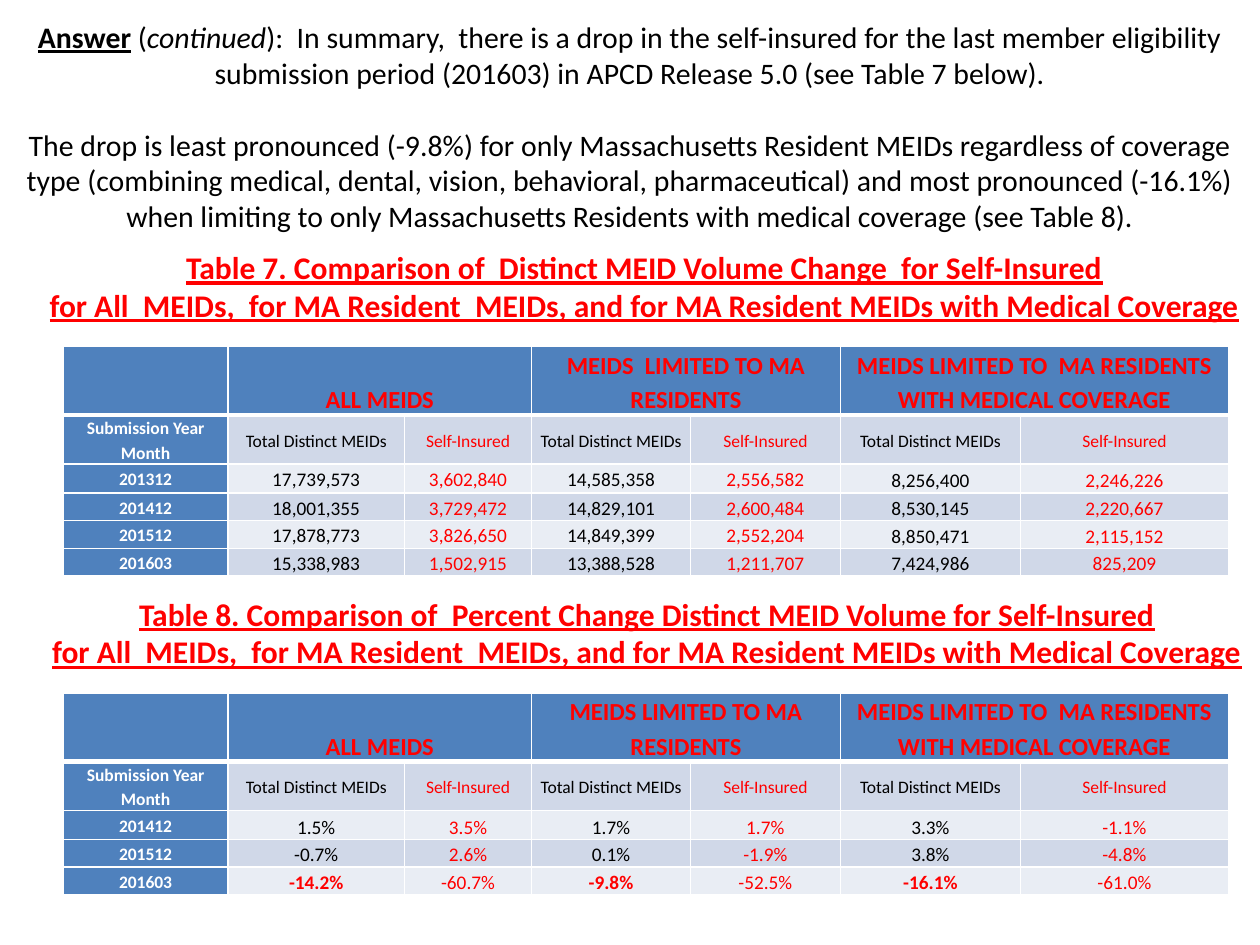
from dataclasses import dataclass

from pptx import Presentation
from pptx.dml.color import RGBColor as Color
from pptx.enum.text import MSO_ANCHOR as Anchor, MSO_AUTO_SIZE as AutoSize, PP_ALIGN as Align
from pptx.oxml.ns import qn
from pptx.util import Inches, Pt
from lxml.etree import SubElement


@dataclass(frozen=True)
class Theme:
    font: str = "Calibri"
    black: str = "000000"
    red: str = "FF0000"
    white: str = "FFFFFF"
    header: str = "4F81BD"
    bands: tuple = ("D0D8E8", "E9EDF4")
    title_size: int = 17
    caption_size: int = 18
    group_size: int = 14
    label_size: int = 10
    value_size: int = 11


def apply(target, formats):
    for name, value in formats.items():
        setattr(target, name, value)


class SlideBuilder:
    def __init__(self, slide, theme):
        self.slide = slide
        self.theme = theme

    def add_run(self, paragraph, text, size, color, **formats):
        run = paragraph.add_run()
        run.text = text
        apply(run.font, {"name": self.theme.font, "size": Pt(size), "bold": False, **formats})
        run.font.color.rgb = Color.from_string(color)

    def place(self, shape, left, top, width, height):
        apply(shape, {"left": Inches(left), "top": Inches(top),
                      "width": Inches(width), "height": Inches(height)})

    def title(self, box, paragraphs):
        shape = self.slide.shapes.title
        self.place(shape, *box)
        frame = shape.text_frame
        apply(frame, {"word_wrap": True, "auto_size": AutoSize.NONE,
                      "vertical_anchor": Anchor.MIDDLE})
        for index, runs in enumerate(paragraphs):
            paragraph = frame.add_paragraph() if index else frame.paragraphs[0]
            gap = Pt(20.7) if index else Pt(0)
            apply(paragraph, {"alignment": Align.CENTER, "space_before": gap})
            for text, formats in runs:
                self.add_run(paragraph, text, self.theme.title_size, self.theme.black, **formats)

    def caption(self, box, lines):
        frame = self.slide.shapes.add_textbox(*map(Inches, box)).text_frame
        apply(frame, {"word_wrap": False, "auto_size": AutoSize.SHAPE_TO_FIT_TEXT})
        for index, line in enumerate(lines):
            paragraph = frame.add_paragraph() if index else frame.paragraphs[0]
            paragraph.alignment = Align.CENTER
            self.add_run(paragraph, line, self.theme.caption_size, self.theme.red,
                         bold=True, underline=True)

    def border(self, cell, row):
        properties = cell._tc.get_or_add_tcPr()
        widths = {"L": 1, "R": 1, "T": 3 if row == 1 else 1, "B": 3 if row == 0 else 1}
        for side, width in widths.items():
            line = SubElement(properties, qn(f"a:ln{side}"), w=str(Pt(width)))
            fill = SubElement(line, qn("a:solidFill"))
            SubElement(fill, qn("a:srgbClr"), val=self.theme.white)

    def cell_style(self, row, column, text, highlights):
        theme = self.theme
        if row == 0:
            return theme.header, theme.group_size, theme.red, True
        if column == 0:
            return theme.header, theme.label_size, theme.white, True
        size = theme.label_size if row == 1 else theme.value_size
        bold = text in highlights
        color = theme.red if bold or column % 2 == 0 else theme.black
        return theme.bands[(row - 1) % 2], size, color, bold

    def table(self, box, columns, heights, rows, bottom_from, highlights=()):
        frame = self.slide.shapes.add_table(len(rows), len(columns), *map(Inches, box))
        table = frame.table
        for column, width in zip(table.columns, columns):
            column.width = Inches(width)
        for row, height in zip(table.rows, heights):
            row.height = Inches(height)
        for row, texts in enumerate(rows):
            for column, text in enumerate(texts):
                cell = table.cell(row, column)
                fill, size, color, bold = self.cell_style(row, column, text, highlights)
                self.border(cell, row)
                cell.fill.solid()
                cell.fill.fore_color.rgb = Color.from_string(fill)
                at_bottom = row == 0 or row > 1 and column >= bottom_from
                apply(cell, {"margin_left": Inches(0.07), "margin_right": Inches(0.07),
                             "margin_top": 0, "margin_bottom": 0,
                             "vertical_anchor": Anchor.BOTTOM if at_bottom else Anchor.MIDDLE})
                paragraph = cell.text_frame.paragraphs[0]
                apply(paragraph, {"alignment": Align.CENTER, "line_spacing": 1.15})
                if text:
                    self.add_run(paragraph, text, size, color, bold=bold)
        for column in range(1, len(columns), 2):
            table.cell(0, column).merge(table.cell(0, column + 1))


COLUMNS = [1.31, 1.4, 1.01, 1.26, 1.19, 1.43, 1.65]
SUBHEADER = ["Submission Year Month"] + ["Total Distinct MEIDs", "Self-Insured"] * 3
SCOPE = "for All  MEIDs,  for MA Resident  MEIDs, and for MA Resident MEIDs with Medical Coverage"

VOLUMES = [
    ["201312", "17,739,573", "3,602,840", "14,585,358", "2,556,582", "8,256,400", "2,246,226"],
    ["201412", "18,001,355", "3,729,472", "14,829,101", "2,600,484", "8,530,145", "2,220,667"],
    ["201512", "17,878,773", "3,826,650", "14,849,399", "2,552,204", "8,850,471", "2,115,152"],
    ["201603", "15,338,983", "1,502,915", "13,388,528", "1,211,707", "7,424,986", "825,209"],
]
CHANGES = [
    ["201412", "1.5%", "3.5%", "1.7%", "1.7%", "3.3%", "-1.1%"],
    ["201512", "-0.7%", "2.6%", "0.1%", "-1.9%", "3.8%", "-4.8%"],
    ["201603", "-14.2%", "-60.7%", "-9.8%", "-52.5%", "-16.1%", "-61.0%"],
]
SUMMARY = [
    [
        ("Answer", {"bold": True, "underline": True}),
        (" (", {}),
        ("continued", {"italic": True}),
        ("):  In summary,  there is a drop in the self-insured for the last member eligibility "
         "submission period (201603) in APCD Release 5.0 (see Table 7 below).", {}),
    ],
    [
        ("The drop is least pronounced (-9.8%) for only Massachusetts Resident MEIDs regardless "
         "of coverage type (combining medical, dental, vision, behavioral, pharmaceutical) and "
         "most pronounced (-16.1%) when limiting to only Massachusetts Residents with medical "
         "coverage (see Table 8).", {}),
    ],
]


def group_header(residents):
    return ["", "ALL MEIDS", "", residents, "",
            "MEIDS LIMITED TO  MA RESIDENTS WITH MEDICAL COVERAGE", ""]


def main():
    presentation = Presentation()
    apply(presentation, {"slide_width": Inches(10), "slide_height": Inches(7.5)})
    slide = presentation.slides.add_slide(presentation.slide_layouts[5])
    builder = SlideBuilder(slide, Theme())

    builder.table((0.5, 2.75, 9.25, 1.81), COLUMNS, [0.44, 0.36, 0.23, 0.22, 0.22, 0.22],
                  [group_header("MEIDS  LIMITED TO MA RESIDENTS"), SUBHEADER, *VOLUMES],
                  bottom_from=5)
    builder.table((0.5, 5.5, 9.25, 1.59), COLUMNS, [0.42, 0.36, 0.23, 0.22, 0.22],
                  [group_header("MEIDS LIMITED TO MA RESIDENTS"), SUBHEADER, *CHANGES],
                  bottom_from=1, highlights=("-14.2%", "-9.8%", "-16.1%"))
    builder.caption((0.25, 1.92, 9.73, 0.71), [
        "Table 7. Comparison of  Distinct MEID Volume Change  for Self-Insured", SCOPE])
    builder.title((0, 0.42, 10, 1.16), SUMMARY)
    builder.caption((0.27, 4.67, 9.73, 0.71), [
        "Table 8. Comparison of  Percent Change Distinct MEID Volume for Self-Insured", SCOPE])

    presentation.save("out.pptx")


if __name__ == "__main__":
    main()
